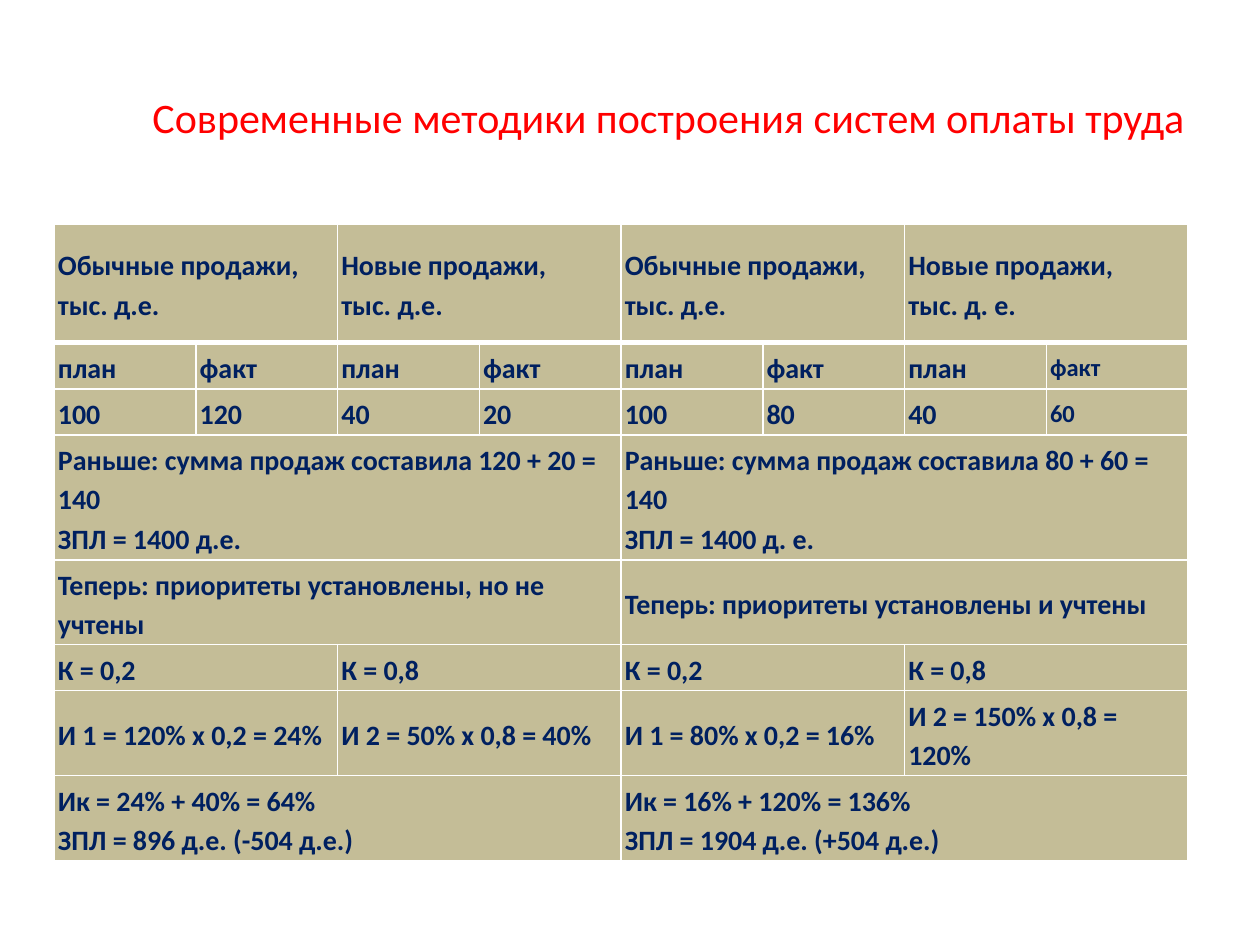
from copy import deepcopy

from lxml import etree
from pptx import Presentation
from pptx.dml.color import RGBColor
from pptx.enum import text as t
from pptx.oxml import ns
from pptx.util import Inches, Pt

COLS = 8
HEIGHTS = [0.94, 0.36, 0.36, 0.99, 0.67, 0.36, 0.67, 0.67]
# Each row is split evenly among its entries.
ROWS = [
    ["Обычные продажи,\nтыс. д.е.", "Новые продажи,\nтыс. д.е.",
     "Обычные продажи,\nтыс. д.е.", "Новые продажи,\nтыс. д. е."],
    ["план", "факт"] * 4,
    ["100", "120", "40", "20", "100", "80", "40", "60"],
    ["Раньше: сумма продаж составила 120 + 20 = 140\nЗПЛ = 1400 д.е.",
     "Раньше: сумма продаж составила 80 + 60 = 140\nЗПЛ = 1400 д. е."],
    ["Теперь: приоритеты установлены, но не учтены",
     "Теперь: приоритеты установлены и учтены"],
    ["К = 0,2", "К = 0,8"] * 2,
    ["И 1 = 120% х 0,2 = 24%", "И 2 = 50% х 0,8 = 40%",
     "И 1 = 80% х 0,2 = 16%", "И 2 = 150% х 0,8 = 120%"],
    ["Ик = 24% + 40% = 64%\nЗПЛ = 896 д.е. (-504 д.е.)",
     "Ик = 16% + 120% = 136%\nЗПЛ = 1904 д.е. (+504 д.е.)"],
]


def color(code):
    return RGBColor.from_string(code)


def write(frame, words, size=16, ink="002060", bold=False, align=None, space=None):
    """Fill a text frame with one paragraph; newlines become line breaks."""
    par = frame.paragraphs[0]
    par.text = words
    par.alignment = align
    par.line_spacing = space
    for run in par.runs:
        font = run.font
        font.name, font.size, font.bold = "Calibri", Pt(size), bold
        font.color.rgb = color(ink)
    for brk in par._p.findall(ns.qn("a:br")):
        brk.append(deepcopy(par.runs[0]._r.rPr))


def border(cell, sides, width, ink="FFFFFF"):
    props = cell._tc.get_or_add_tcPr()
    for at, side in enumerate(sides):
        line = etree.Element(ns.qn(f"a:ln{side}"), w=str(Pt(width[at])))
        fill = etree.SubElement(line, ns.qn("a:solidFill"))
        etree.SubElement(fill, ns.qn("a:srgbClr"), val=ink)
        props.insert(at, line)


class Deck:
    ink, sand = "002060", "C4BD97"

    def __init__(self):
        self.prs = Presentation()
        self.prs.slide_width, self.prs.slide_height = Inches(10), Inches(7.5)
        self.slide = self.prs.slides.add_slide(self.prs.slide_layouts[6])

    def title(self, words, *box):
        shape = self.slide.shapes.add_textbox(*map(Inches, box))
        frame = shape.text_frame
        frame.word_wrap = True
        frame.vertical_anchor = t.MSO_ANCHOR.MIDDLE
        write(frame, words, size=24, ink="FF0000", align=t.PP_ALIGN.RIGHT)

    def cell(self, cell, row):
        """Style one cell; the header row is closed by a thick rule."""
        cell.margin_left = cell.margin_right = Inches(0.03)
        cell.margin_top = cell.margin_bottom = Inches(0.03)
        cell.vertical_anchor = t.MSO_ANCHOR.MIDDLE
        cell.fill.solid()
        cell.fill.fore_color.rgb = color(self.sand)
        border(cell, "LRTB", [1, 1, 3 if row == 1 else 1, 3 if row == 0 else 1])

    def table(self, rows, heights, left, top, width):
        grid = self.slide.shapes.add_table(
            len(rows), COLS, Inches(left), Inches(top),
            Inches(width), Inches(sum(heights))).table
        for col in grid.columns:
            col.width = Inches(width / COLS)
        for r, (words, height) in enumerate(zip(rows, heights)):
            grid.rows[r].height = Inches(height)
            for c in range(COLS):
                self.cell(grid.cell(r, c), r)
            span = COLS // len(words)
            for n, word in enumerate(words):
                cell = grid.cell(r, n * span)
                if span > 1:
                    cell.merge(grid.cell(r, (n + 1) * span - 1))
                small = span == 1 and n == COLS - 1
                write(cell.text_frame, word, size=14 if small else 16,
                      ink=self.ink, bold=True, space=1.15)


def main():
    deck = Deck()
    deck.title("Современные методики построения систем оплаты труда", 0.5, 0.3, 9, 1.25)
    deck.table(ROWS, HEIGHTS, 0.43, 1.78, 9)
    deck.prs.save("out.pptx")


if __name__ == "__main__":
    main()
